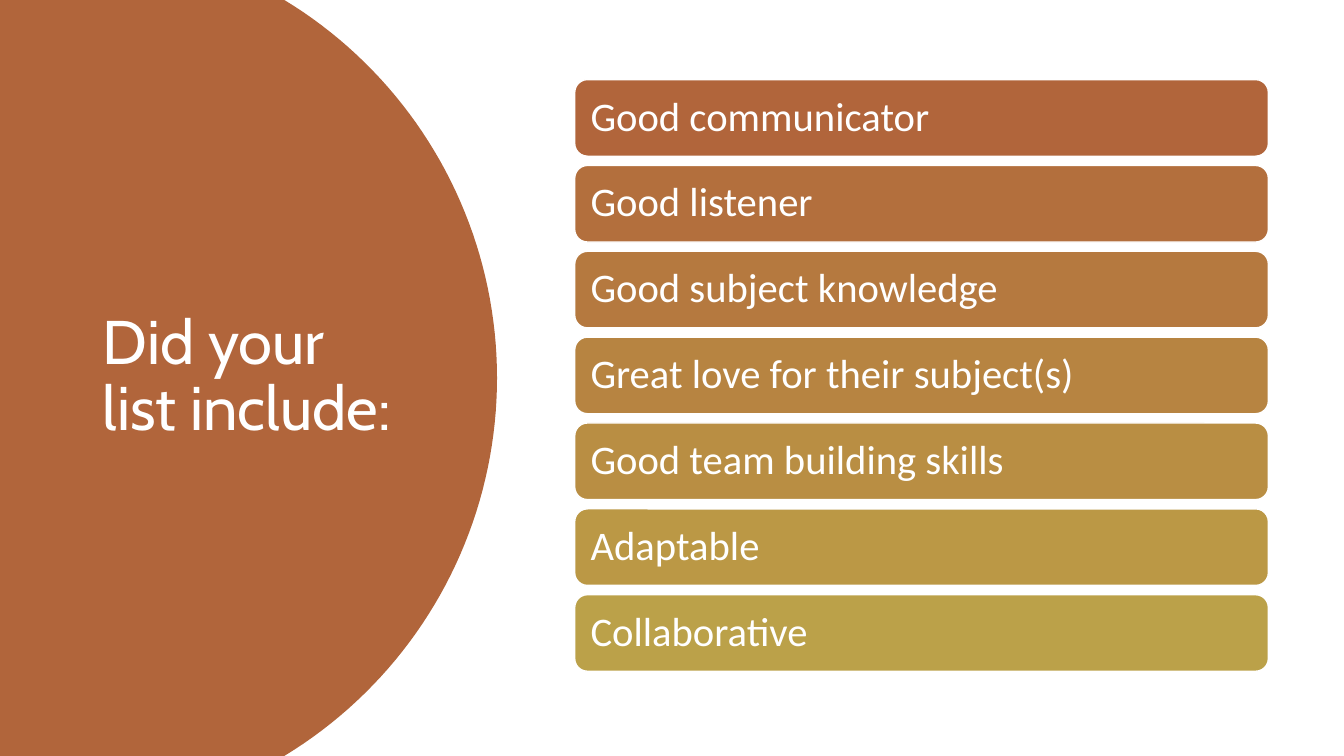
from dataclasses import dataclass
from math import asin, cos, sin

from pptx import Presentation
from pptx.dml.color import RGBColor
from pptx.enum.shapes import MSO_SHAPE
from pptx.enum.text import MSO_ANCHOR, PP_ALIGN
from pptx.util import Pt

PX = 9144  # EMU in one px, 100 px to the inch


@dataclass(frozen=True)
class Theme:
    title_font: str = "Cabin"
    body_font: str = "Calibri"
    title_size: int = 44
    body_size: int = 29
    light: str = "FFFFFF"
    accent: str = "B1653B"
    bars: tuple = ("B1653B", "B36F3D", "B5793F", "B78441", "B98E43", "BB9845", "BBA149")


@dataclass(frozen=True)
class Box:
    left: int
    top: int
    width: int
    height: int

    def emu(self):
        return [round(side * PX) for side in (self.left, self.top, self.width, self.height)]


THEME = Theme()
QUALITIES = (
    "Good communicator",
    "Good listener",
    "Good subject knowledge",
    "Great love for their subject(s)",
    "Good team building skills",
    "Adaptable",
    "Collaborative",
)


def write_text(shape, text, *, font, size, inset_x, inset_y):
    """Put one left-aligned, vertically centred paragraph into a shape."""
    frame = shape.text_frame
    frame.word_wrap = True
    frame.vertical_anchor = MSO_ANCHOR.MIDDLE
    frame.margin_left = frame.margin_right = inset_x * PX
    frame.margin_top = frame.margin_bottom = inset_y * PX
    para = frame.paragraphs[0]
    para.alignment = PP_ALIGN.LEFT
    para.line_spacing = 0.9
    span = para.add_run()
    span.text = text
    span.font.name = font
    span.font.size = Pt(size)
    span.font.color.rgb = RGBColor.from_string(THEME.light)


def paint(shape, color):
    shape.shadow.inherit = False
    shape.fill.solid()
    shape.fill.fore_color.rgb = RGBColor.from_string(color)


def add_disc(page, box, shoulder=282, steps=80):
    """Fill the box up to a circular right edge that starts at the shoulder."""
    half = box.height / 2
    bulge = box.width - shoulder
    radius = (half ** 2 + bulge ** 2) / (2 * bulge)
    center_x = box.left + box.width - radius
    center_y = box.top + half
    reach = asin(half / radius)
    angles = [reach * (2 * step / steps - 1) for step in range(steps + 1)]
    edge = [(center_x + radius * cos(angle), center_y + radius * sin(angle)) for angle in angles]
    outline = edge + [(box.left, box.top + box.height)]
    builder = page.shapes.build_freeform(box.left * PX, box.top * PX)
    builder.add_line_segments([(x * PX, y * PX) for x, y in outline], close=True)
    disc = builder.convert_to_shape()
    paint(disc, THEME.accent)
    disc.line.fill.background()


def add_title_panel(page, box, title):
    add_disc(page, box)
    title_box = Box(box.left + 92, box.top + 70, box.width - 170, box.height - 141)
    write_text(page.shapes.add_textbox(*title_box.emu()), title, font=THEME.title_font,
               size=THEME.title_size, inset_x=10, inset_y=5)


def add_quality_bars(page, box, qualities, bar_height=76):
    """Stack one rounded bar per quality, evenly spread over the box."""
    pitch = (box.height - bar_height) / (len(qualities) - 1)
    for index, (quality, color) in enumerate(zip(qualities, THEME.bars)):
        bar_box = Box(box.left, box.top + index * pitch, box.width, bar_height)
        bar = page.shapes.add_shape(MSO_SHAPE.ROUNDED_RECTANGLE, *bar_box.emu())
        paint(bar, color)
        bar.line.color.rgb = RGBColor.from_string(THEME.light)
        bar.line.width = Pt(1)
        write_text(bar, quality, font=THEME.body_font, size=THEME.body_size,
                   inset_x=12, inset_y=12)


def main():
    deck = Presentation()
    deck.slide_width, deck.slide_height = 1333 * PX, 750 * PX
    page = deck.slides.add_slide(deck.slide_layouts[6])
    add_title_panel(page, Box(0, 0, 493, 750), "Did your list include:")
    add_quality_bars(page, Box(570, 79, 688, 587), QUALITIES)
    deck.save("out.pptx")


if __name__ == "__main__":
    main()
